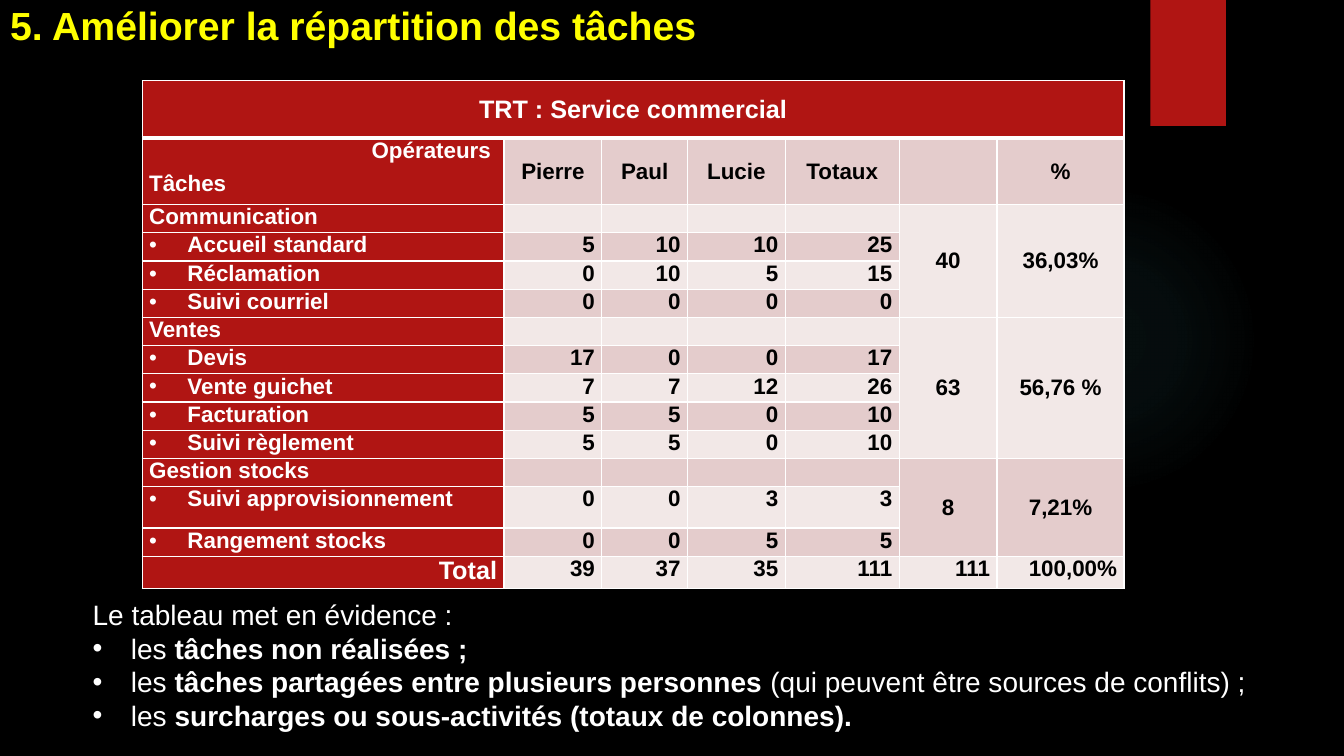
import pptx
import pptx.util
import pptx.dml.color
import pptx.enum.dml
import pptx.enum.shapes
import pptx.enum.text
import pptx.oxml
import pptx.oxml.ns
import lxml.etree

HEADING = "5. Améliorer la répartition des tâches"
TABLE_HEADING = "TRT\u00a0: Service commercial"
CORNER = ("Opérateurs ", "Tâches")
OPERATORS = ("Pierre", "Paul", "Lucie", "Totaux", "", "%")
SECTIONS = [
    ("Communication", "40", "36,03%", [
        ("Accueil standard", 5, 10, 10, 25),
        ("Réclamation", 0, 10, 5, 15),
        ("Suivi courriel", 0, 0, 0, 0)]),
    ("Ventes", "63", "56,76 %", [
        ("Devis", 17, 0, 0, 17),
        ("Vente guichet", 7, 7, 12, 26),
        ("Facturation", 5, 5, 0, 10),
        ("Suivi règlement", 5, 5, 0, 10)]),
    ("Gestion stocks", "8", "7,21%", [
        ("Suivi approvisionnement", 0, 0, 3, 3),
        ("Rangement stocks", 0, 0, 5, 5)]),
]
TOTALS = ("Total", 39, 37, 35, 111, 111, "100,00%")
FINDINGS = [
    [("Le tableau met en évidence\u00a0:", False)],
    [("les", False), (" tâches non réalisées ;", True)],
    [("les", False), (" tâches partagées entre plusieurs personnes ", True),
     ("(qui peuvent être sources de conflits) ;", False)],
    [("les", False), (" surcharges ou sous-activités (totaux de colonnes).", True)],
]
COLUMNS = (3.59, 0.97, 0.85, 0.97, 1.13, 0.97, 1.26)
ROWS = (0.57, 0.66) + (0.28,) * 10 + (0.41, 0.28, 0.32)
RED, WHITE, BLACK, YELLOW = "B01513", "FFFFFF", "000000", "FFFF00"
STRIPES = ("F2E8E7", "E4CCCC")
GLOW = ((0, 7), (36, 6), (69, 0))

inch, pt = pptx.util.Inches, pptx.util.Pt
ALIGN = pptx.enum.text.PP_ALIGN
ANCHOR = pptx.enum.text.MSO_ANCHOR
SHAPE = pptx.enum.shapes.MSO_SHAPE
qn = pptx.oxml.ns.qn


def color(value):
    return pptx.dml.color.RGBColor.from_string(value)


def apply(target, values):
    for name, value in values.items():
        setattr(target, name, value)


def paint(fill, value):
    fill.solid()
    fill.fore_color.rgb = color(value)


def write(paragraph, runs, size, ink, align=ALIGN.LEFT, bullet=False, before=0):
    apply(paragraph, {"alignment": align, "space_before": pt(before)})
    if bullet:
        properties = paragraph._p.get_or_add_pPr()
        properties.set("marL", str(inch(0.38)))
        properties.set("indent", str(-inch(0.38)))
        font = lxml.etree.SubElement(properties, qn("a:buFont"))
        font.set("typeface", "Arial")
        lxml.etree.SubElement(properties, qn("a:buChar")).set("char", "•")
    for text, bold in runs:
        run = paragraph.add_run()
        run.text = text
        apply(run.font, {"name": "Arial", "size": pt(size), "bold": bold})
        run.font.color.rgb = color(ink)


def border(cell, row):
    properties = cell._tc.get_or_add_tcPr()
    widths = {"L": 1, "R": 1, "T": 3 if row == 1 else 1, "B": 3 if row == 0 else 1}
    for side, width in widths.items():
        line = lxml.etree.SubElement(properties, qn("a:ln" + side))
        line.set("w", str(pt(width)))
        solid = lxml.etree.SubElement(line, qn("a:solidFill"))
        lxml.etree.SubElement(solid, qn("a:srgbClr")).set("val", WHITE)


def fill_cell(row, column, text, align=ALIGN.RIGHT, size=16, bullet=False, middle=False):
    cell = table.cell(row, column)
    if middle:
        cell.vertical_anchor = ANCHOR.MIDDLE
    ink = WHITE if row == 0 or column == 0 else BLACK
    write(cell.text_frame.paragraphs[0], [(str(text), True)], size, ink, align, bullet)


deck = pptx.Presentation()
apply(deck, {"slide_width": inch(13.33), "slide_height": inch(7.5)})
slide = deck.slides.add_slide(deck.slide_layouts[5])
paint(slide.background.fill, BLACK)

glow = slide.shapes.add_shape(SHAPE.OVAL, inch(9.41), inch(1.83), inch(3.08), inch(3.08))
glow.shadow.inherit = False
glow.line.fill.background()
stops = "".join(
    f'<a:gs pos="{place * 1000}"><a:srgbClr val="50B9C1"><a:alpha val="{alpha * 1000}"/>'
    f'</a:srgbClr></a:gs>' for place, alpha in GLOW)
gradient = pptx.oxml.parse_xml(
    f'<a:gradFill {pptx.oxml.ns.nsdecls("a")}><a:gsLst>{stops}</a:gsLst><a:path path="circle">'
    '<a:fillToRect l="50000" t="50000" r="50000" b="50000"/></a:path></a:gradFill>')
glow._element.spPr.find(qn("a:prstGeom")).addnext(gradient)

ribbon = slide.shapes.add_shape(SHAPE.RECTANGLE, inch(11.41), 0, inch(0.75), inch(1.25))
ribbon.shadow.inherit = False
ribbon.line.fill.background()
paint(ribbon.fill, RED)

table = slide.shapes.add_table(
    len(ROWS), len(COLUMNS), inch(1.41), inch(0.8), inch(sum(COLUMNS)), inch(sum(ROWS))).table
for column, width in enumerate(COLUMNS):
    table.columns[column].width = inch(width)
for row, height in enumerate(ROWS):
    table.rows[row].height = inch(height)
    for column in range(len(COLUMNS)):
        cell = table.cell(row, column)
        apply(cell, {"margin_left": inch(0.07), "margin_right": inch(0.07),
                     "margin_top": 0, "margin_bottom": 0})
        border(cell, row)
        paint(cell.fill, RED if row == 0 or column == 0 else STRIPES[row % 2])
        ending = lxml.etree.SubElement(cell.text_frame.paragraphs[0]._p, qn("a:endParaRPr"))
        ending.set("sz", "1600")

table.cell(0, 0).merge(table.cell(0, len(COLUMNS) - 1))
fill_cell(0, 0, TABLE_HEADING, ALIGN.CENTER, 18, middle=True)
fill_cell(1, 0, CORNER[0])
write(table.cell(1, 0).text_frame.add_paragraph(), [(CORNER[1], True)], 16, WHITE, before=6)
for column, operator in enumerate(OPERATORS, 1):
    if operator:
        fill_cell(1, column, operator, ALIGN.CENTER, middle=True)

row = 2
for section, subtotal, share, tasks in SECTIONS:
    fill_cell(row, 0, section, ALIGN.LEFT)
    for column, text in ((5, subtotal), (6, share)):
        table.cell(row, column).merge(table.cell(row + len(tasks), column))
        fill_cell(row, column, text, ALIGN.CENTER, middle=True)
    for task_row, (task, *hours) in enumerate(tasks, row + 1):
        fill_cell(task_row, 0, task, ALIGN.LEFT, bullet=True)
        for column, value in enumerate(hours, 1):
            fill_cell(task_row, column, value)
    row += len(tasks) + 1
for column, total in enumerate(TOTALS):
    fill_cell(row, column, total, size=16 if column else 18)

findings = slide.shapes.add_textbox(inch(0.82), inch(5.88), inch(12.12), inch(1.45)).text_frame
findings.word_wrap = True
for index, runs in enumerate(FINDINGS):
    paragraph = findings.add_paragraph() if index else findings.paragraphs[0]
    write(paragraph, runs, 20, WHITE, ALIGN.JUSTIFY if index else ALIGN.LEFT, bullet=index > 0)

heading = slide.shapes.title
apply(heading, {"left": 0, "top": inch(-0.04), "width": inch(8.7), "height": inch(0.57)})
apply(heading.text_frame, {"word_wrap": True, "vertical_anchor": ANCHOR.MIDDLE,
                           "auto_size": pptx.enum.text.MSO_AUTO_SIZE.NONE})
write(heading.text_frame.paragraphs[0], [(HEADING, True)], 28, YELLOW)

deck.save("out.pptx")
